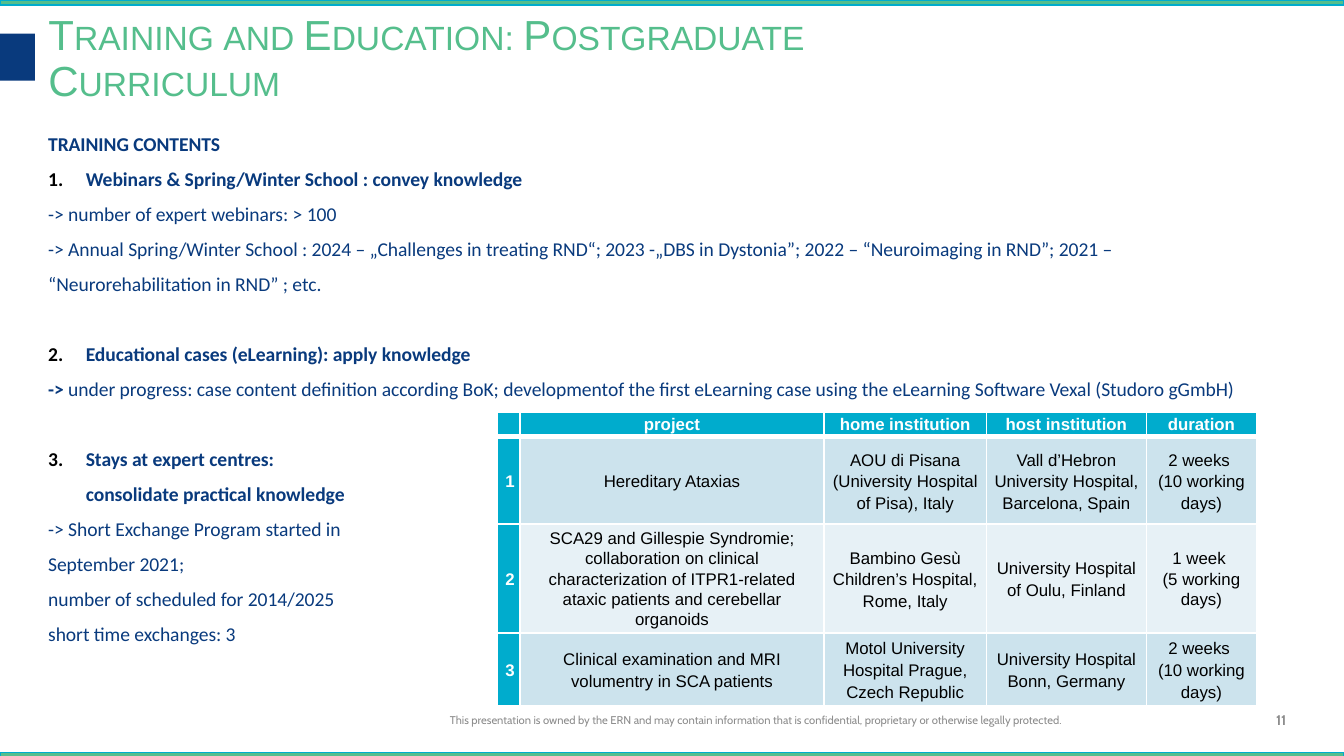
"""Build the postgraduate curriculum slide with its training contents and exchange table."""
from dataclasses import dataclass
from typing import Optional

import lxml.etree
import pptx
import pptx.dml.color
import pptx.enum.shapes
import pptx.enum.text
import pptx.oxml.ns
import pptx.util
from pptx.util import Inches

RGBColor = pptx.dml.color.RGBColor
Align = pptx.enum.text.PP_ALIGN
Anchor = pptx.enum.text.MSO_ANCHOR

GREEN = RGBColor(0x55, 0xBE, 0x8C)
CYAN = RGBColor(0x00, 0xAC, 0xCD)
NAVY = RGBColor(0x09, 0x3A, 0x7D)
GREY = RGBColor(0x8C, 0x8C, 0x8C)
BLACK = RGBColor(0x00, 0x00, 0x00)
WHITE = RGBColor(0xFF, 0xFF, 0xFF)
BAND_DARK = RGBColor(0xCC, 0xE3, 0xED)
BAND_LIGHT = RGBColor(0xE7, 0xF1, 0xF6)
LINE_PITCH = 18.75
SLIDE_WIDTH = Inches(10)
SLIDE_HEIGHT = SLIDE_WIDTH * 9 // 16


@dataclass(frozen=True)
class Bar:
    left: float
    top: float
    width: float
    height: float
    fill: RGBColor
    line: Optional[RGBColor] = None


@dataclass(frozen=True)
class Entry:
    text: str
    number: int = 0
    bold: bool = False
    lead: str = ""
    gap_before: bool = False


BARS = [
    Bar(0, 0, 10, 0.04, GREEN, CYAN),
    Bar(0, 5.6, 10, 0.04, GREEN, CYAN),
    Bar(0, 0.25, 0.26, 0.35, NAVY),
]

ENTRIES = [
    Entry("TRAINING CONTENTS", bold=True),
    Entry("Webinars & Spring/Winter School : convey knowledge", number=1, bold=True),
    Entry("-> number of expert webinars: > 100\n-> Annual Spring/Winter School : 2024 – "
          "„Challenges in treating RND“; 2023 -„DBS in Dystonia”; 2022 – “Neuroimaging in RND”; "
          "2021 – “Neurorehabilitation in RND” ; etc."),
    Entry("Educational cases (eLearning): apply knowledge", number=2, bold=True, gap_before=True),
    Entry("under progress: case content definition according BoK; developmentof the first "
          "eLearning case using the eLearning Software Vexal (Studoro gGmbH)", lead="-> "),
    Entry("Stays at expert centres: \nconsolidate practical knowledge",
          number=3, bold=True, gap_before=True),
    Entry("-> Short Exchange Program started in \nSeptember 2021;\n"
          "number of scheduled for 2014/2025\nshort time exchanges: 3"),
]

COLUMN_WIDTHS = [0.17, 2.26, 1.21, 1.19, 0.82]
ROW_HEIGHTS = [0.18, 0.65, 0.81, 0.54]
EXCHANGES = [
    ["", "project", "home institution", "host institution", "duration"],
    ["1", "Hereditary Ataxias", "AOU di Pisana (University Hospital of Pisa), Italy",
     "Vall d’Hebron University Hospital, Barcelona, Spain", "2 weeks \n(10 working days)"],
    ["2", "SCA29 and Gillespie Syndromie; collaboration on clinical characterization of "
     "ITPR1-related ataxic patients and cerebellar organoids",
     "Bambino Gesù Children’s Hospital, Rome, Italy",
     "University Hospital of Oulu, Finland", "1 week \n(5 working days)"],
    ["3", "Clinical examination and MRI volumentry in SCA patients",
     "Motol University Hospital Prague, Czech Republic",
     "University Hospital Bonn, Germany", "2 weeks \n(10 working days)"],
]
TIGHT_CELLS = {(2, 1), (2, 4)}


def set_font(paragraph, name: str, size: float, color: RGBColor, bold: bool = False) -> None:
    paragraph.font.name = name
    paragraph.font.size = pptx.util.Pt(size)
    paragraph.font.bold = bold
    paragraph.font.color.rgb = color


def add_child(parent, tag: str, **attributes: str):
    child = lxml.etree.SubElement(parent, pptx.oxml.ns.qn(tag))
    for key, value in attributes.items():
        child.set(key, value)
    return child


def draw_bar(slide, bar: Bar) -> None:
    shape = slide.shapes.add_shape(
        pptx.enum.shapes.MSO_SHAPE.RECTANGLE,
        Inches(bar.left), Inches(bar.top), Inches(bar.width), Inches(bar.height))
    shape.shadow.inherit = False
    shape.fill.solid()
    shape.fill.fore_color.rgb = bar.fill
    if bar.line is None:
        shape.line.fill.background()
    else:
        shape.line.color.rgb = bar.line
        shape.line.width = pptx.util.Pt(1)


def draw_title(slide, text: str) -> None:
    title = slide.shapes.title
    title.left, title.top = Inches(0.26), Inches(0.25)
    title.width, title.height = Inches(7.21), Inches(0.39)
    frame = title.text_frame
    frame.auto_size = pptx.enum.text.MSO_AUTO_SIZE.NONE
    frame.vertical_anchor = Anchor.MIDDLE
    paragraph = frame.paragraphs[0]
    paragraph.text = text
    paragraph.alignment = Align.LEFT
    paragraph.line_spacing = 0.9
    set_font(paragraph, "Arial", 22.5, GREEN)
    paragraph.runs[0]._r.get_or_add_rPr().set("cap", "small")


def add_frame(slide, left: float, top: float, width: float, height: float):
    box = slide.shapes.add_textbox(Inches(left), Inches(top), Inches(width), Inches(height))
    box.text_frame.word_wrap = True
    return box.text_frame


def draw_footer(slide, left: float, width: float, text: str, size: float,
                bold: bool, alignment: Align) -> None:
    frame = add_frame(slide, left, 5.21, width, 0.3)
    frame.vertical_anchor = Anchor.MIDDLE
    paragraph = frame.paragraphs[0]
    paragraph.text = text
    paragraph.alignment = alignment
    set_font(paragraph, "Cabin", size, GREY, bold)


def draw_contents(slide, entries: list[Entry]) -> None:
    frame = add_frame(slide, 0.26, 0.85, 9.29, 4.07)
    for index, entry in enumerate(entries):
        paragraph = frame.add_paragraph() if index else frame.paragraphs[0]
        paragraph.line_spacing = pptx.util.Pt(LINE_PITCH)
        if entry.gap_before:
            paragraph.space_before = pptx.util.Pt(LINE_PITCH)
        if entry.lead:
            lead = paragraph.add_run()
            lead.text = entry.lead
            lead.font.bold = True
            paragraph.add_run().text = entry.text
        else:
            paragraph.text = entry.text
        if entry.number:
            properties = paragraph._p.get_or_add_pPr()
            properties.set("marL", str(Inches(0.28)))
            properties.set("indent", str(-Inches(0.28)))
            add_child(add_child(properties, "a:buClr"), "a:srgbClr", val=str(BLACK))
            add_child(properties, "a:buFont", typeface="+mj-lt")
            add_child(properties, "a:buAutoNum", type="arabicPeriod", startAt=str(entry.number))
        set_font(paragraph, "Calibri", 10.5, NAVY, entry.bold)


def set_borders(cell, row: int) -> None:
    properties = cell._tc.get_or_add_tcPr()
    widths = {"L": 1, "R": 1, "T": 3 if row == 1 else 1, "B": 3 if row == 0 else 1}
    for side, width in widths.items():
        line = add_child(properties, f"a:ln{side}", w=str(pptx.util.Pt(width)))
        add_child(add_child(line, "a:solidFill"), "a:srgbClr", val=str(WHITE))


def draw_cell(cell, text: str, row: int, column: int) -> None:
    is_header = row == 0 or column == 0
    set_borders(cell, row)
    cell.fill.solid()
    cell.fill.fore_color.rgb = CYAN if is_header else BAND_DARK if row % 2 else BAND_LIGHT
    cell.margin_left = cell.margin_right = Inches(0.06)
    cell.margin_top = cell.margin_bottom = 0
    cell.vertical_anchor = Anchor.MIDDLE if row else Anchor.TOP
    paragraph = cell.text_frame.paragraphs[0]
    paragraph.text = text
    paragraph.alignment = Align.CENTER
    paragraph.line_spacing = 1.07 if (row, column) in TIGHT_CELLS else 1.15
    set_font(paragraph, "Arial", 9, WHITE if is_header else BLACK, is_header)
    if not text:
        add_child(paragraph._p, "a:endParaRPr", sz="900")


def draw_exchanges(slide) -> None:
    table = slide.shapes.add_table(
        len(ROW_HEIGHTS), len(COLUMN_WIDTHS), Inches(3.7), Inches(3.07),
        Inches(sum(COLUMN_WIDTHS)), Inches(sum(ROW_HEIGHTS))).table
    for column, width in zip(table.columns, COLUMN_WIDTHS):
        column.width = Inches(width)
    for row, height in zip(table.rows, ROW_HEIGHTS):
        row.height = Inches(height)
    for row, texts in enumerate(EXCHANGES):
        for column, text in enumerate(texts):
            draw_cell(table.cell(row, column), text, row, column)


def main() -> None:
    presentation = pptx.Presentation()
    presentation.slide_width, presentation.slide_height = SLIDE_WIDTH, SLIDE_HEIGHT
    slide = presentation.slides.add_slide(presentation.slide_layouts[5])
    for bar in BARS:
        draw_bar(slide, bar)
    draw_title(slide, "Training and Education: Postgraduate Curriculum")
    draw_footer(slide, 3.25, 5.1, "This presentation is owned by the ERN and may contain information "
                "that is confidential, proprietary or otherwise legally protected.", 6, False, Align.LEFT)
    draw_footer(slide, 9.08, 0.59, "11", 7.5, True, Align.RIGHT)
    draw_contents(slide, ENTRIES)
    draw_exchanges(slide)
    presentation.save("out.pptx")


if __name__ == "__main__":
    main()
